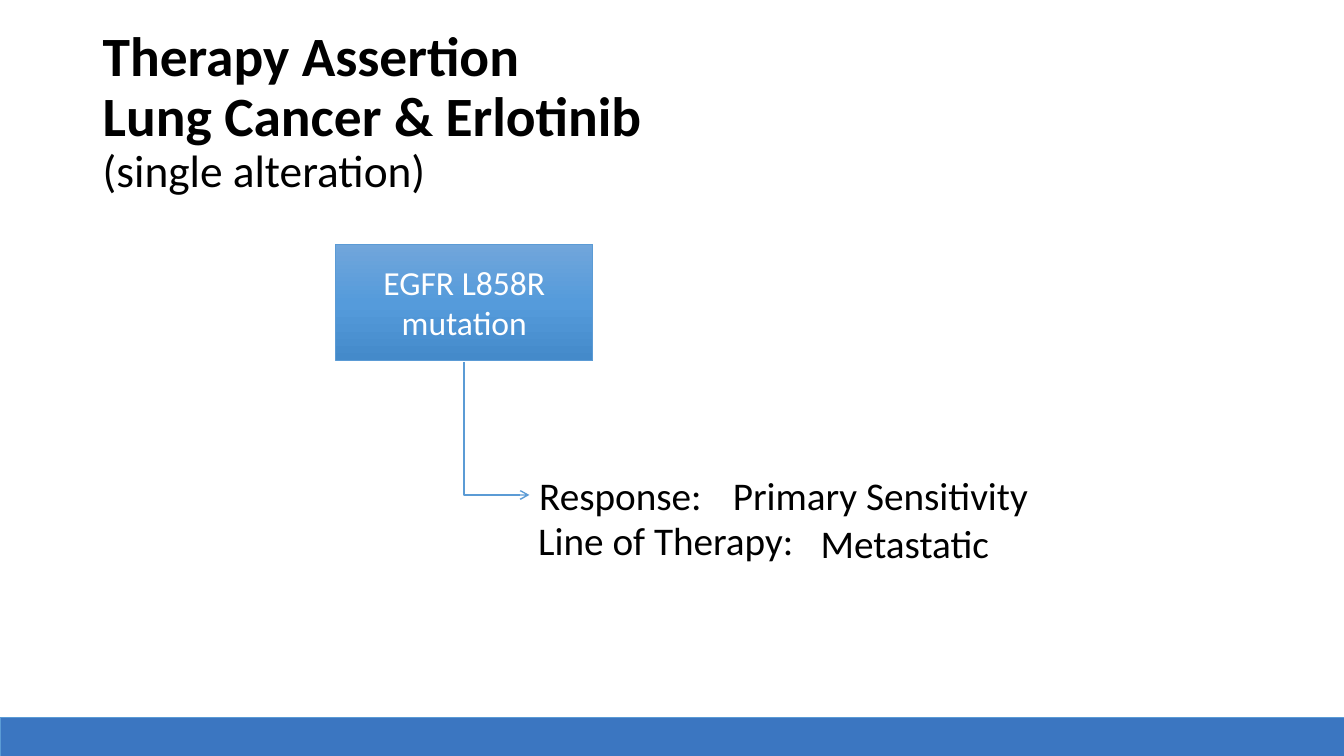
from dataclasses import dataclass

from lxml.etree import SubElement
from pptx import Presentation
from pptx.dml.color import RGBColor
from pptx.enum.shapes import MSO_CONNECTOR, MSO_SHAPE
from pptx.enum.text import MSO_ANCHOR, PP_ALIGN
from pptx.oxml.ns import qn
from pptx.shapes.autoshape import Shape
from pptx.slide import Slide
from pptx.util import Inches, Pt


@dataclass(frozen=True)
class Theme:
    """Colours, font and type sizes of the slide."""
    font: str = "Calibri"
    ink: str = "000000"
    light: str = "FFFFFF"
    band: str = "3B76C1"
    outline: str = "5B9BD5"
    gradient: tuple[tuple[int, str], ...] = ((0, "71A6DB"), (50, "559BDB"), (100, "448ACA"))
    title_size: float = 39.6
    subtitle_size: float = 32.4
    box_size: float = 24
    label_size: float = 28


@dataclass(frozen=True)
class Area:
    """Position and size in inches."""
    left: float
    top: float
    width: float
    height: float

    def lengths(self) -> tuple[Inches, ...]:
        """Return the position and size as lengths."""
        return tuple(Inches(value) for value in (self.left, self.top, self.width, self.height))


@dataclass(frozen=True)
class Line:
    """One line of text with its size and weight."""
    text: str
    size: float
    bold: bool = False


@dataclass(frozen=True)
class Label:
    """A piece of assertion detail and its place."""
    text: str
    area: Area


THEME = Theme()
LABELS = (
    Label("Response:", Area(5.25, 4.63, 1.84, 0.57)),
    Label("Primary Sensitivity", Area(7.17, 4.63, 3.16, 0.57)),
    Label("Line of Therapy:", Area(5.24, 5.07, 2.77, 0.57)),
    Label("Metastatic", Area(8.04, 5.1, 1.91, 0.57)),
)


def write_text(shape: Shape, *lines: Line, color: str = THEME.ink, wrap: bool = True,
               anchor: MSO_ANCHOR = MSO_ANCHOR.TOP, align: PP_ALIGN = PP_ALIGN.LEFT,
               spacing: float = 1.0) -> None:
    """Write lines into one paragraph of a shape."""
    frame = shape.text_frame
    frame.word_wrap = wrap
    frame.vertical_anchor = anchor
    paragraph = frame.paragraphs[0]
    paragraph.alignment = align
    paragraph.line_spacing = spacing
    for index, line in enumerate(lines):
        if index:
            paragraph.add_line_break()
        run = paragraph.add_run()
        run.text = line.text
        run.font.name = THEME.font
        run.font.size = Pt(line.size)
        run.font.bold = line.bold
        run.font.color.rgb = RGBColor.from_string(color)


def add_rectangle(slide: Slide, area: Area) -> Shape:
    """Add an outlined rectangle without a shadow."""
    shape = slide.shapes.add_shape(MSO_SHAPE.RECTANGLE, *area.lengths())
    shape.shadow.inherit = False
    shape.line.color.rgb = RGBColor.from_string(THEME.outline)
    shape.line.width = Pt(0.5)
    return shape


def fill_gradient(shape: Shape) -> None:
    """Fill a shape with the theme gradient from top to bottom."""
    shape.fill.gradient()
    shape.fill.gradient_angle = 270
    stops = shape.element.spPr.find(f"{qn('a:gradFill')}/{qn('a:gsLst')}")
    for stop in list(stops):
        stops.remove(stop)
    for position, color in THEME.gradient:
        stop = SubElement(stops, qn("a:gs"), pos=str(position * 1000))
        SubElement(stop, qn("a:srgbClr"), val=color)


def add_elbow_arrow(slide: Slide, start: tuple[float, float], end: tuple[float, float]) -> None:
    """Add an arrow that runs down from its start and then right."""
    center_x, center_y = (start[0] + end[0]) / 2, (start[1] + end[1]) / 2
    half_run, half_drop = (end[0] - start[0]) / 2, (end[1] - start[1]) / 2
    connector = slide.shapes.add_connector(
        MSO_CONNECTOR.ELBOW,
        Inches(center_x + half_drop), Inches(center_y - half_run),
        Inches(center_x - half_drop), Inches(center_y + half_run))
    connector.line.color.rgb = RGBColor.from_string(THEME.outline)
    connector.line.width = Pt(1)
    properties = connector.element.spPr
    properties.find(qn("a:xfrm")).set("rot", str(270 * 60000))
    properties.find(qn("a:prstGeom")).set("prst", "bentConnector2")
    SubElement(properties.find(qn("a:ln")), qn("a:tailEnd"), type="arrow")
    SubElement(properties, qn("a:effectLst"))


def main() -> None:
    """Build the therapy assertion slide and save it."""
    presentation = Presentation()
    presentation.slide_width = Inches(13.33)
    presentation.slide_height = Inches(7.5)
    slide = presentation.slides.add_slide(presentation.slide_layouts[6])

    band = add_rectangle(slide, Area(0, 7.12, 13.33, 0.41))
    band.fill.solid()
    band.fill.fore_color.rgb = RGBColor.from_string(THEME.band)

    title = slide.shapes.add_textbox(*Area(0.92, 0.4, 11.5, 1.45).lengths())
    write_text(title,
               Line("Therapy Assertion", THEME.title_size, bold=True),
               Line("Lung Cancer & Erlotinib", THEME.title_size, bold=True),
               Line("(single alteration)", THEME.subtitle_size),
               anchor=MSO_ANCHOR.MIDDLE, spacing=0.9)

    mutation = add_rectangle(slide, Area(3.33, 2.42, 2.55, 1.16))
    fill_gradient(mutation)
    write_text(mutation, Line("EGFR L858R mutation", THEME.box_size), color=THEME.light,
               anchor=MSO_ANCHOR.MIDDLE, align=PP_ALIGN.CENTER)

    add_elbow_arrow(slide, (4.6, 3.59), (5.25, 4.91))
    for label in LABELS:
        box = slide.shapes.add_textbox(*label.area.lengths())
        write_text(box, Line(label.text, THEME.label_size), wrap=False)

    presentation.save("out.pptx")


if __name__ == "__main__":
    main()
